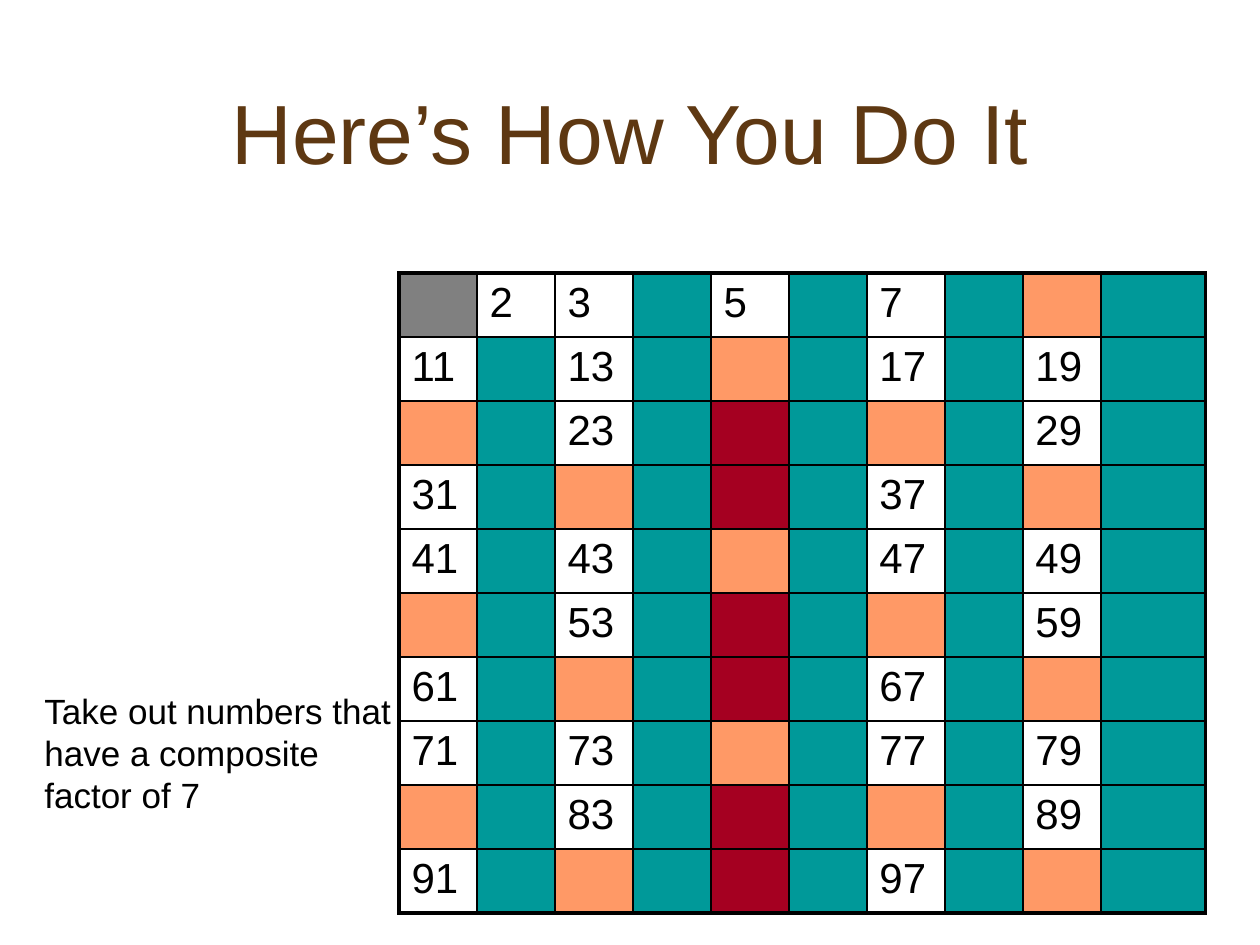
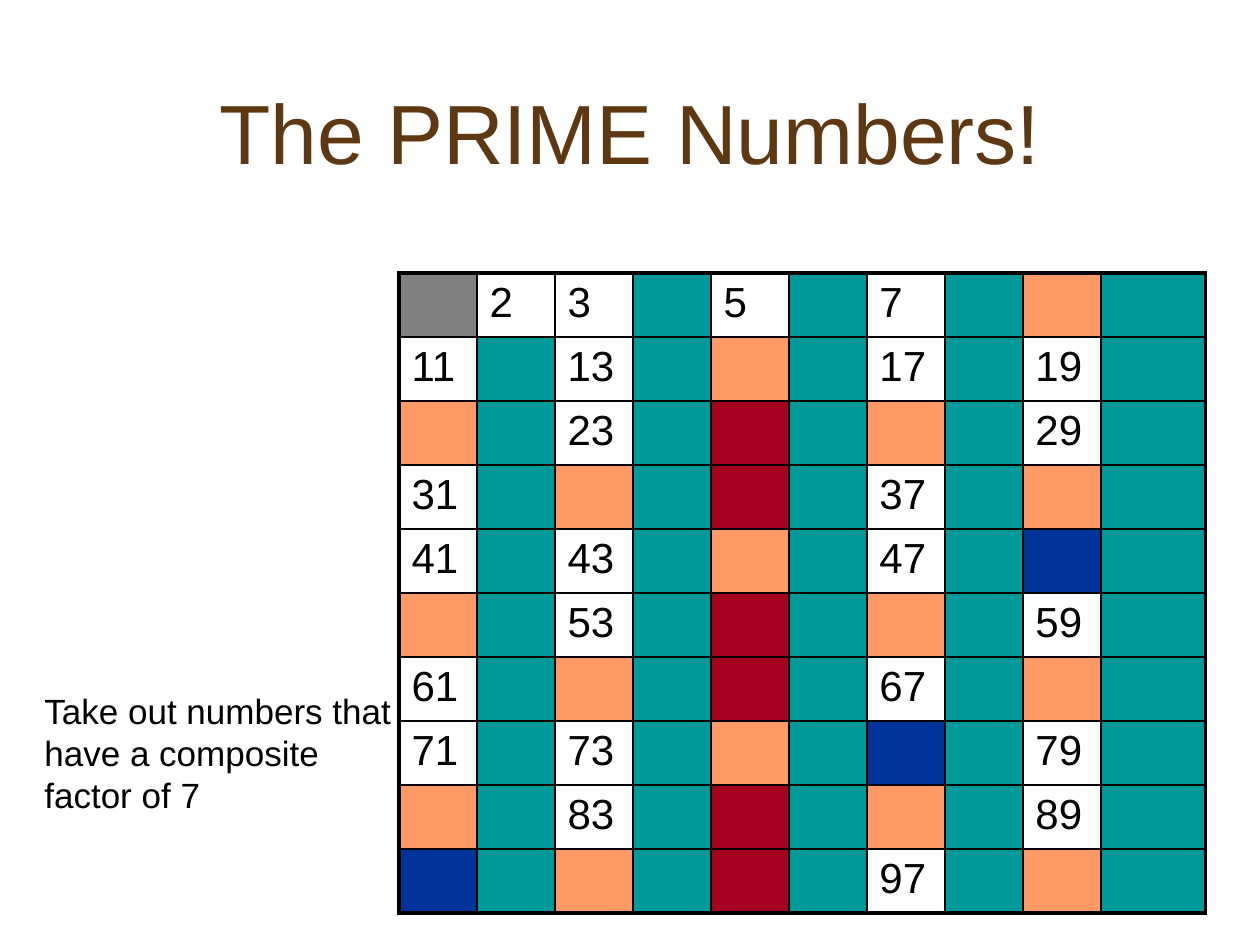
from dataclasses import dataclass

from lxml.etree import SubElement
from pptx import Presentation
from pptx.dml.color import RGBColor
from pptx.enum.text import MSO_ANCHOR, PP_ALIGN
from pptx.oxml.ns import qn
from pptx.util import Pt

SCALE = 914400 // 126
PAGE_WIDTH, PAGE_HEIGHT = 1260, 945
TITLE_BOX = (42, 63, 1176, 136)
NOTE_BOX = (32, 683, 378, 139)
GRID_BOX = (399, 273, 807, 640)
GRID_SIZE = 10
COLUMN_WIDTH = 78


@dataclass(frozen=True)
class Theme:
    font: str = "Arial"
    title: str = "5E3812"
    text: str = "000000"
    border: str = "000000"
    one: str = "808080"
    title_size: int = 48
    number_size: int = 24
    note_size: int = 20
    outer_line: float = 2.25
    inner_line: float = 1


THEME = Theme()
MULTIPLE_COLOURS = {2: "009999", 3: "FF9966", 5: "A50021", 7: "003399"}


def px(*lengths):
    return [length * SCALE for length in lengths]


def write(frame, text, size, colour, align=PP_ALIGN.LEFT):
    para = frame.paragraphs[0]
    para.alignment = align
    span = para.add_run()
    span.text = text
    formats = {"name": THEME.font, "size": Pt(size)}
    for name, value in formats.items():
        setattr(span.font, name, value)
    span.font.color.rgb = RGBColor.from_string(colour)


def add_text(page, box, text, size, colour, align, anchor):
    frame = page.shapes.add_textbox(*px(*box)).text_frame
    for name, value in {"word_wrap": True, "vertical_anchor": anchor}.items():
        setattr(frame, name, value)
    write(frame, text, size, colour, align)


def add_title(page, box, text):
    add_text(page, box, text, THEME.title_size, THEME.title,
             PP_ALIGN.CENTER, MSO_ANCHOR.MIDDLE)


def add_note(page, box, text):
    add_text(page, box, text, THEME.note_size, THEME.text,
             PP_ALIGN.LEFT, MSO_ANCHOR.TOP)


def set_borders(cell, row, column):
    last = GRID_SIZE - 1
    outer_sides = {
        "a:lnL": column == 0,
        "a:lnR": column == last,
        "a:lnT": row == 0,
        "a:lnB": row == last,
    }
    properties = cell._tc.get_or_add_tcPr()
    for side, is_outer in outer_sides.items():
        width = THEME.outer_line if is_outer else THEME.inner_line
        line = SubElement(properties, qn(side), w=str(Pt(width)))
        fill = SubElement(line, qn("a:solidFill"))
        SubElement(fill, qn("a:srgbClr"), val=THEME.border)


def crossed_out_colour(number, factors):
    if number == 1:
        return THEME.one
    for factor in factors:
        if number > factor and number % factor == 0:
            return MULTIPLE_COLOURS[factor]
    return None


def add_sieve(page, box, factors):
    left, top, width, height = box
    table = page.shapes.add_table(GRID_SIZE, GRID_SIZE, *px(*box)).table
    for name in ("first_row", "horz_banding"):
        setattr(table, name, False)
    last_width = width - COLUMN_WIDTH * (GRID_SIZE - 1)
    widths = [COLUMN_WIDTH] * (GRID_SIZE - 1) + [last_width]
    for column, column_width in zip(table.columns, px(*widths)):
        column.width = column_width
    for row in table.rows:
        row.height = height // GRID_SIZE * SCALE
    for index, cell in enumerate(table.iter_cells()):
        number = index + 1
        set_borders(cell, *divmod(index, GRID_SIZE))
        colour = crossed_out_colour(number, factors)
        if colour:
            cell.fill.solid()
            cell.fill.fore_color.rgb = RGBColor.from_string(colour)
        else:
            cell.fill.background()
            write(cell.text_frame, str(number), THEME.number_size, THEME.text)


def add_sieve_page(deck, title, note, factors):
    page = deck.slides.add_slide(deck.slide_layouts[6])
    add_sieve(page, GRID_BOX, factors)
    add_title(page, TITLE_BOX, title)
    add_note(page, NOTE_BOX, note)


def main():
    deck = Presentation()
    deck.slide_width, deck.slide_height = px(PAGE_WIDTH, PAGE_HEIGHT)
    note = "Take out numbers that have a composite factor of 7"
    add_sieve_page(deck, "Here’s How You Do It", note, (2, 3, 5))
    add_sieve_page(deck, "The PRIME Numbers!", note, (2, 3, 5, 7))
    deck.save("out.pptx")


if __name__ == "__main__":
    main()
